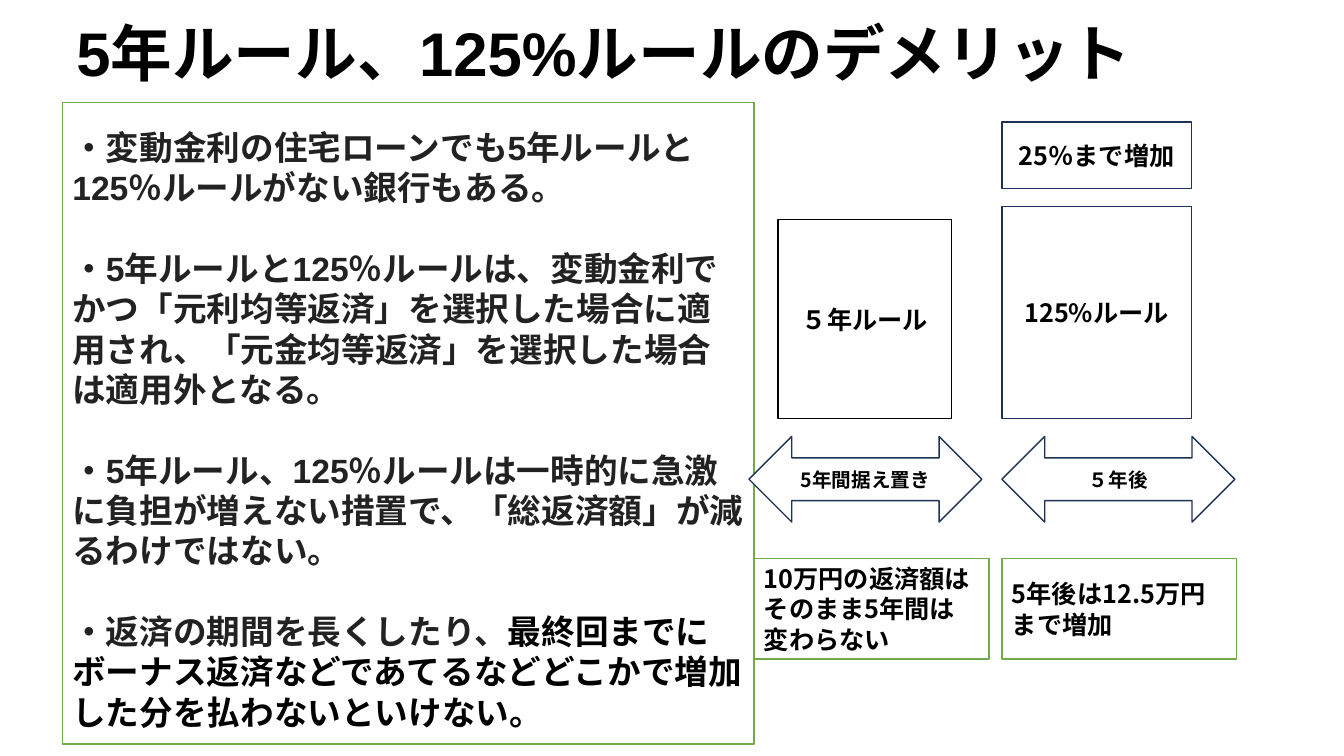
import dataclasses

import pptx
import pptx.dml.color
import pptx.enum.shapes
import pptx.enum.text
import pptx.oxml.ns
import pptx.util
from lxml import etree

SHAPE = pptx.enum.shapes.MSO_SHAPE
ALIGN = pptx.enum.text.PP_ALIGN
ANCHOR = pptx.enum.text.MSO_ANCHOR


@dataclasses.dataclass(frozen=True)
class Theme:
    latin: str = "Arial"
    japanese: str = "Noto Sans CJK JP"
    black: str = "000000"
    ink: str = "222222"
    white: str = "FFFFFF"
    green: str = "70AD47"
    navy: str = "1E3256"
    title_size: int = 44
    body_size: int = 24
    label_size: int = 18
    arrow_size: int = 14
    leading: float = 1.2


class SlideBuilder:
    """Places elements by percentages of the slide's width and height."""

    def __init__(self, deck, theme):
        self.deck = deck
        self.theme = theme
        self.slide = deck.slides.add_slide(deck.slide_layouts[6])

    def area(self, left, top, width, height):
        across, down = self.deck.slide_width / 100, self.deck.slide_height / 100
        return [round(v) for v in (left * across, top * down, width * across, height * down)]

    def add_run(self, paragraph, text, size, font, color):
        run = paragraph.add_run()
        run.text = text
        run.font.size = pptx.util.Pt(size)
        run.font.bold = True
        run.font.name = font
        run.font.color.rgb = pptx.dml.color.RGBColor.from_string(color)
        east_asian = etree.SubElement(run.font._element, pptx.oxml.ns.qn("a:ea"))
        east_asian.set("typeface", font)

    def title(self, area, text):
        frame = self.slide.shapes.add_textbox(*self.area(*area)).text_frame
        frame.word_wrap = True
        frame.vertical_anchor = ANCHOR.MIDDLE
        paragraph = frame.paragraphs[0]
        paragraph.line_spacing = 0.8
        self.add_run(paragraph, text, self.theme.title_size, self.theme.latin, self.theme.black)

    def outline(self, area, line, kind=SHAPE.RECTANGLE):
        """Adds a white shape with a thin outline and returns its text frame."""
        shape = self.slide.shapes.add_shape(kind, *self.area(*area))
        shape.shadow.inherit = False
        shape.fill.solid()
        shape.fill.fore_color.rgb = pptx.dml.color.RGBColor.from_string(self.theme.white)
        shape.line.color.rgb = pptx.dml.color.RGBColor.from_string(line)
        shape.line.width = pptx.util.Pt(1)
        shape.text_frame.word_wrap = True
        shape.text_frame.vertical_anchor = ANCHOR.MIDDLE
        return shape.text_frame

    def label(self, area, text, line, size, align=ALIGN.CENTER, kind=SHAPE.RECTANGLE):
        paragraph = self.outline(area, line, kind).paragraphs[0]
        paragraph.alignment = align
        paragraph.line_spacing = pptx.util.Pt(size * self.theme.leading)
        self.add_run(paragraph, text, size, self.theme.japanese, self.theme.black)

    def arrow(self, area, text):
        self.label(area, text, self.theme.navy, self.theme.arrow_size, kind=SHAPE.LEFT_RIGHT_ARROW)

    def note(self, area, text):
        self.label(area, text, self.theme.green, self.theme.label_size, align=ALIGN.LEFT)

    def points(self, area, points):
        """Lists (plain, emphasised) pairs, one line apart."""
        theme = self.theme
        frame = self.outline(area, theme.green)
        frame.vertical_anchor = ANCHOR.TOP
        frame.margin_top = pptx.util.Inches(0.24)
        leading = pptx.util.Pt(theme.body_size * theme.leading)
        for index, (plain, emphasised) in enumerate(points):
            paragraph = frame.add_paragraph() if index else frame.paragraphs[0]
            paragraph.alignment = ALIGN.LEFT
            paragraph.line_spacing = leading
            if index:
                paragraph.space_before = leading
            self.add_run(paragraph, plain, theme.body_size, theme.latin, theme.ink)
            if emphasised:
                self.add_run(paragraph, emphasised, theme.body_size, theme.japanese, theme.black)


DEMERITS = [
    ("・変動金利の住宅ローンでも5年ルールと125％ルールがない銀行もある。", ""),
    ("・5年ルールと125％ルールは、変動金利でかつ「元利均等返済」を選択した場合に適用され、"
     "「元金均等返済」を選択した場合は適用外となる。", ""),
    ("・5年ルール、125％ルールは一時的に急激に負担が増えない措置で、"
     "「総返済額」が減るわけではない。", ""),
    ("・返済の期間を長くしたり、",
     "最終回までにボーナス返済などであてるなどどこかで増加した分を払わないといけない。"),
]


def main():
    deck = pptx.Presentation()
    deck.slide_width = pptx.util.Inches(13.33)
    deck.slide_height = pptx.util.Inches(7.5)
    theme = Theme()
    builder = SlideBuilder(deck, theme)

    later = 74.55
    arrow_row = (57.73, 17.33, 11.33)
    note_row = (73.87, 17.48, 13.33)

    builder.title((4.95, 2.8, 86.4, 9.87), "5年ルール、125%ルールのデメリット")
    builder.points((4.65, 13.6, 51.45, 84.8), DEMERITS)
    builder.label((57.9, 29.07, 12.9, 26.27), "５年ルール", theme.black, theme.label_size)
    builder.label((later, 27.33, 14.1, 28), "125%ルール", theme.navy, theme.label_size)
    for left, period in ((55.73, "5年間据え置き"), (later, "５年後")):
        builder.arrow((left, *arrow_row), period)
    builder.label((later, 16.13, 14.1, 8.8), "25％まで増加", theme.navy, theme.label_size)
    for left, effect in ((56.1, "10万円の返済額はそのまま5年間は変わらない"),
                         (later, "5年後は12.5万円まで増加")):
        builder.note((left, *note_row), effect)

    deck.save("out.pptx")


if __name__ == "__main__":
    main()
